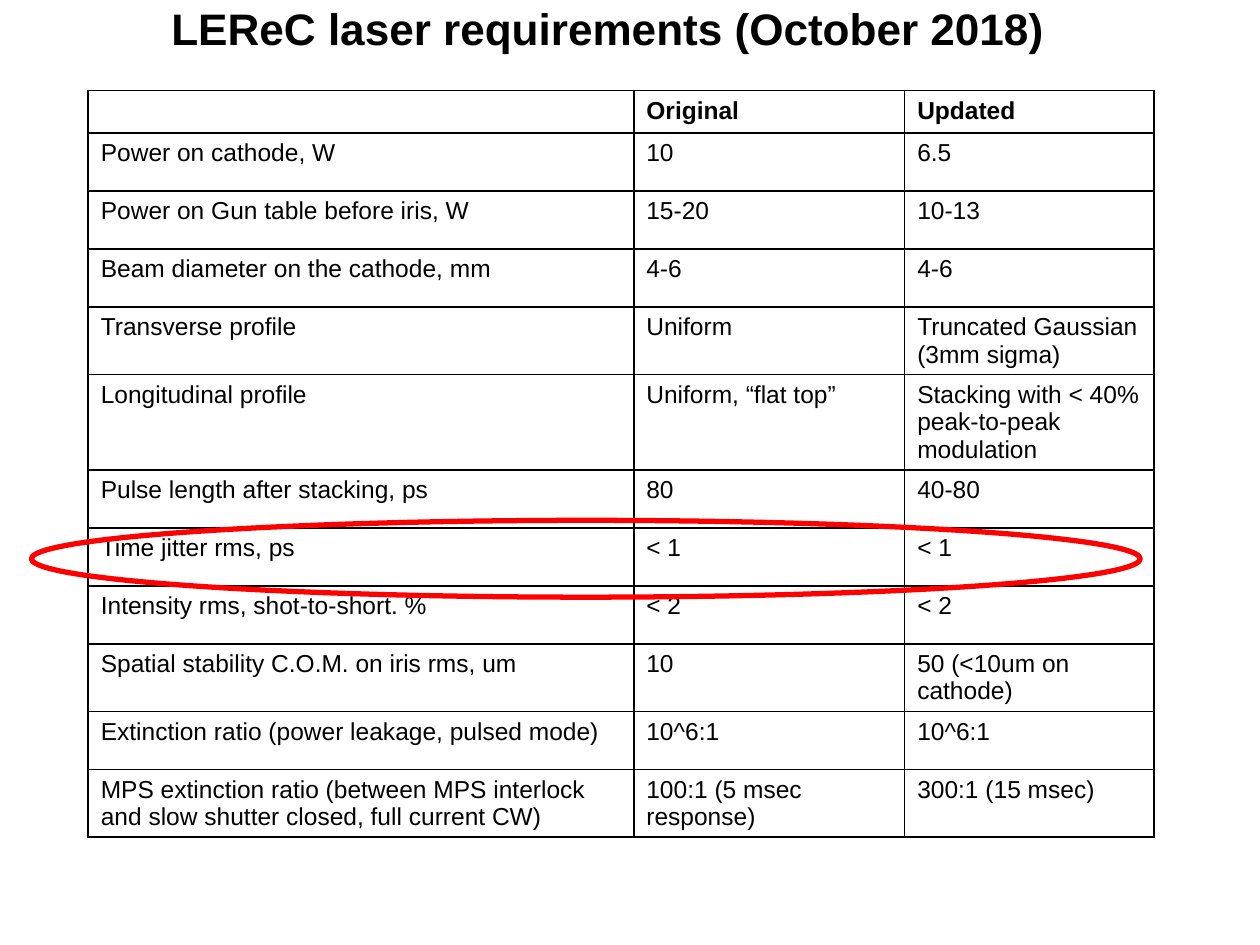
from lxml.etree import SubElement
from pptx import Presentation
from pptx.dml.color import RGBColor
from pptx.enum.shapes import MSO_SHAPE as Shape
from pptx.enum.text import MSO_ANCHOR as Anchor, PP_ALIGN as Align
from pptx.oxml.ns import qn
from pptx.util import Inches, Pt

BLACK = RGBColor(0, 0, 0)
RED = RGBColor(255, 0, 0)

COLUMN_WIDTHS = (4.33, 2.15, 1.98)
HEADER_HEIGHT = 0.32
ROW_HEIGHT = 0.46
REQUIREMENTS = [
    ("", "Original", "Updated"),
    ("Power on cathode, W", "10", "6.5"),
    ("Power on Gun table before iris, W", "15-20", "10-13"),
    ("Beam diameter on the cathode, mm", "4-6", "4-6"),
    ("Transverse profile", "Uniform", "Truncated Gaussian\n(3mm sigma)"),
    ("Longitudinal profile", "Uniform, “flat top”",
     "Stacking with < 40% peak-to-peak modulation"),
    ("Pulse length after stacking, ps", "80", "40-80"),
    ("Time jitter rms, ps", "< 1", "< 1"),
    ("Intensity rms, shot-to-short. %", "< 2", "< 2"),
    ("Spatial stability C.O.M. on iris rms, um", "10", "50 (<10um on cathode)"),
    ("Extinction ratio (power leakage, pulsed mode)", "10^6:1", "10^6:1"),
    ("MPS extinction ratio (between MPS interlock and slow shutter closed, full current CW)",
     "100:1 (5 msec response)", "300:1 (15 msec)"),
]


class SlideBuilder:
    font_name = "Arial"
    title_size = 25.2
    cell_size = 14
    border_width = 1

    def __init__(self, page):
        self.page = page

    def add_span(self, para, text, size, bold=False):
        span = para.add_run()
        span.text = text
        span.font.name = self.font_name
        span.font.size = Pt(size)
        span.font.bold = bold
        span.font.color.rgb = BLACK

    def add_title(self, text, left, top, width, height):
        title = self.page.shapes.title
        title.left, title.top = Inches(left), Inches(top)
        title.width, title.height = Inches(width), Inches(height)
        title.text_frame.word_wrap = True
        title.text_frame.vertical_anchor = Anchor.TOP
        para = title.text_frame.paragraphs[0]
        para.alignment = Align.LEFT
        para.line_spacing = 0.9
        self.add_span(para, text, self.title_size, bold=True)

    def add_borders(self, cell):
        properties = cell._tc.get_or_add_tcPr()
        for side in ("a:lnL", "a:lnR", "a:lnT", "a:lnB"):
            line = SubElement(properties, qn(side), w=str(Pt(self.border_width)))
            fill = SubElement(line, qn("a:solidFill"))
            SubElement(fill, qn("a:srgbClr"), val=str(BLACK))

    def fill_cell(self, cell, text, bold):
        self.add_borders(cell)
        cell.fill.background()
        frame = cell.text_frame
        for index, line in enumerate(text.split("\n")):
            para = frame.add_paragraph() if index else frame.paragraphs[0]
            if line:
                self.add_span(para, line, self.cell_size, bold)
            else:
                SubElement(para._p, qn("a:endParaRPr"), sz=str(self.cell_size * 100))

    def add_table(self, rows, left, top):
        height = HEADER_HEIGHT + ROW_HEIGHT * (len(rows) - 1)
        table = self.page.shapes.add_table(
            len(rows), len(COLUMN_WIDTHS), Inches(left), Inches(top),
            Inches(sum(COLUMN_WIDTHS)), Inches(height)).table
        table.first_row = False
        table.horz_banding = False
        for column, width in zip(table.columns, COLUMN_WIDTHS):
            column.width = Inches(width)
        for index, texts in enumerate(rows):
            table.rows[index].height = Inches(ROW_HEIGHT if index else HEADER_HEIGHT)
            for cell, text in zip(table.rows[index].cells, texts):
                self.fill_cell(cell, text, bold=index == 0)

    def add_highlight(self, left, top, width, height):
        ellipse = self.page.shapes.add_shape(
            Shape.OVAL, Inches(left), Inches(top), Inches(width), Inches(height))
        ellipse.shadow.inherit = False
        ellipse.fill.background()
        ellipse.line.color.rgb = RED
        ellipse.line.width = Pt(3)


def main():
    deck = Presentation()
    deck.slide_width, deck.slide_height = Inches(10), Inches(7.5)
    builder = SlideBuilder(deck.slides.add_slide(deck.slide_layouts[5]))
    builder.add_title("LEReC laser requirements (October 2018)", 1.26, 0.01, 7.33, 0.77)
    builder.add_table(REQUIREMENTS, 0.7, 0.72)
    builder.add_highlight(0.25, 4.13, 8.8, 0.61)
    deck.save("out.pptx")


if __name__ == "__main__":
    main()
